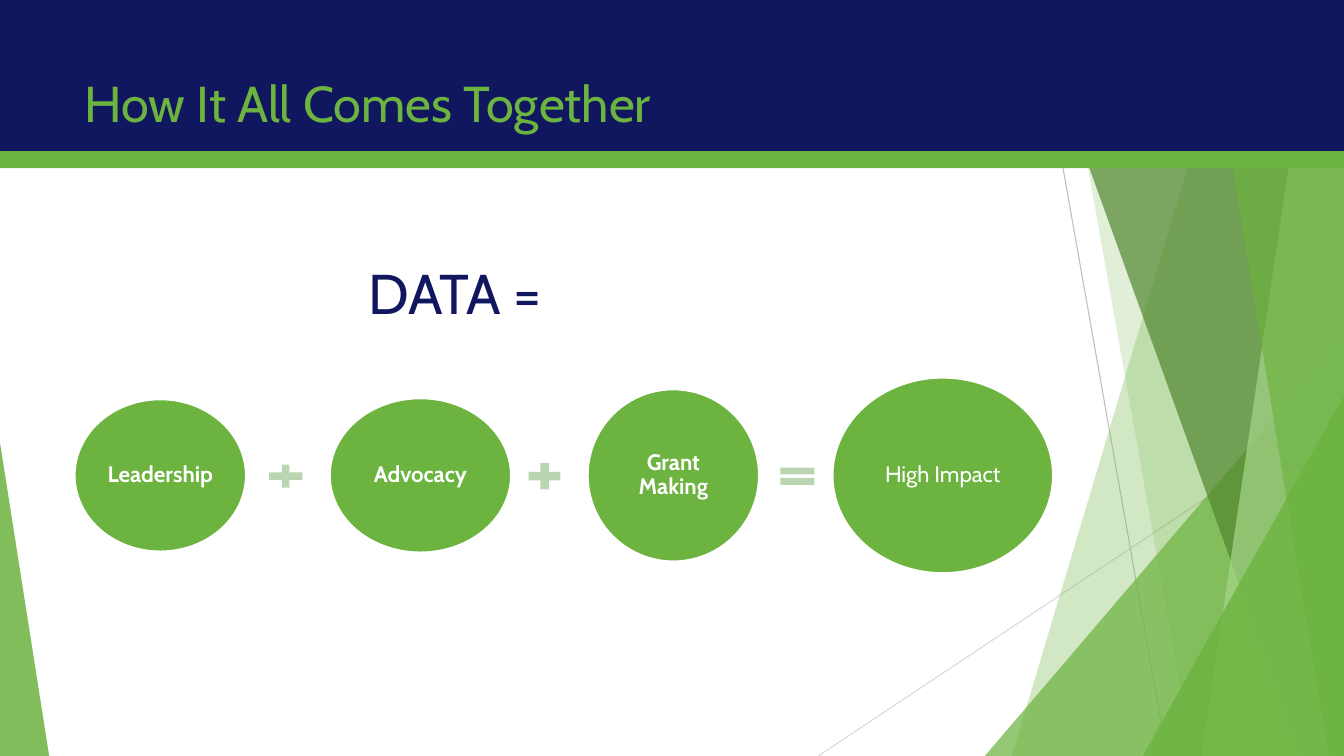
from dataclasses import dataclass
from lxml.etree import SubElement
from pptx import Presentation
from pptx.dml.color import RGBColor as Rgb
from pptx.enum.shapes import MSO_CONNECTOR as Connector, MSO_SHAPE as Preset
from pptx.enum.text import MSO_ANCHOR as Anchor, PP_ALIGN as Align
from pptx.oxml.ns import qn
from pptx.util import Cm, Pt


@dataclass(frozen=True)
class Theme:
    font: str = "Cabin"
    green: str = "6CB33F"
    dark_green: str = "51862F"
    light_green: str = "A6D588"
    pale_green: str = "BAD6B0"
    navy: str = "11175E"
    white: str = "FFFFFF"
    grey: str = "BFBFBF"
    light_grey: str = "D9D9D9"
    title_size: int = 36
    data_size: int = 40
    label_size: int = 16


theme = Theme()
WIDTH, HEIGHT = 33.87, 19.05


def paint(shape, color, opacity=100):
    shape.shadow.inherit = False
    shape.line.fill.background()
    shape.fill.solid()
    shape.fill.fore_color.rgb = Rgb.from_string(color)
    if opacity < 100:
        color_element = shape.fill._xPr.find(qn("a:solidFill"))[0]
        SubElement(color_element, qn("a:alpha"), val=str(opacity * 1000))


def write(shape, text, size, color, bold=False):
    shape.text_frame.word_wrap = True
    paragraph = shape.text_frame.paragraphs[0]
    run = paragraph.add_run()
    run.text = text
    run.font.name = theme.font
    run.font.size = Pt(size)
    run.font.bold = bold
    run.font.color.rgb = Rgb.from_string(color)
    return paragraph


presentation = Presentation()
presentation.slide_width = Cm(WIDTH)
presentation.slide_height = Cm(HEIGHT)
slide = presentation.slides.add_slide(presentation.slide_layouts[6])
shapes = slide.shapes

rays = [
    (26.04, 0, 29.41, HEIGHT, theme.grey),
    (WIDTH, 10.24, 20.62, HEIGHT, theme.light_grey),
]
for start_x, start_y, end_x, end_y, color in rays:
    ray = shapes.add_connector(
        Connector.STRAIGHT, Cm(start_x), Cm(start_y), Cm(end_x), Cm(end_y)
    )
    ray.line.color.rgb = Rgb.from_string(color)
    ray.line.width = Pt(0.75)
    SubElement(ray._element.spPr, qn("a:effectLst"))

facets = [
    ("pane", (31.19, 25.5), theme.green, 30),
    ("pane", (26.67, 30.05), theme.green, 20),
    ("wedge", (24.82, 8.46, WIDTH, 1), theme.green, 72),
    ("pane", (25.93, 32.79), theme.dark_green, 70),
    ("pane", (33.1, 30.28), theme.light_green, 70),
    ("pane", (30.38, 33.48), theme.green, 65),
    ("wedge", (28.8, 9.98, WIDTH, 1), theme.green, 80),
    ("wedge", (0, 11.15, 1.24, 0), theme.green, 85),
]
for kind, geometry, color, opacity in facets:
    if kind == "pane":
        top_x, bottom_x = geometry
        outline = shapes.build_freeform(Cm(top_x), 0)
        corners = [(WIDTH, 0), (WIDTH, HEIGHT), (bottom_x, HEIGHT)]
        outline.add_line_segments([(Cm(x), Cm(y)) for x, y in corners], close=True)
        facet = outline.convert_to_shape()
    else:
        left, top, right, apex = geometry
        facet = shapes.add_shape(
            Preset.ISOSCELES_TRIANGLE,
            Cm(left), Cm(top), Cm(right - left), Cm(HEIGHT - top),
        )
        facet.adjustments[0] = apex
    paint(facet, color, opacity)

bands = [(0, 3.81, theme.navy), (3.81, 0.23, theme.green), (4.01, 0.23, theme.green)]
for top, height, color in bands:
    band = shapes.add_shape(Preset.RECTANGLE, 0, Cm(top), Cm(WIDTH), Cm(height))
    paint(band, color)

title = shapes.add_textbox(Cm(1.88), Cm(1.7), Cm(23.88), Cm(3.66))
write(title, "How It All Comes Together", theme.title_size, theme.green)

row_center = 11.98
circles = [
    ("Leadership", 1.88, 4.32, 3.84, True),
    ("Advocacy", 8.31, 4.57, 3.89, True),
    ("Grant Making", 14.81, 4.32, 4.34, True),
    ("High Impact", 20.98, 5.56, 4.93, False),
]
for label, left, width, height, bold in circles:
    circle = shapes.add_shape(
        Preset.OVAL, Cm(left), Cm(row_center - height / 2), Cm(width), Cm(height)
    )
    paint(circle, theme.green)
    circle.line.color.rgb = Rgb.from_string(theme.white)
    circle.line.width = Pt(1.5)
    frame = circle.text_frame
    frame.margin_left = frame.margin_right = Cm(0.05)
    frame.margin_top = frame.margin_bottom = Cm(0.05)
    frame.vertical_anchor = Anchor.MIDDLE
    paragraph = write(circle, label, theme.label_size, theme.white, bold)
    paragraph.alignment = Align.CENTER
    paragraph.line_spacing = 0.9

operators = [
    (Preset.MATH_PLUS, 6.63, 1.14, 0.79),
    (Preset.MATH_PLUS, 13.18, 1.09, 0.91),
    (Preset.MATH_EQUAL, 19.51, 1.17, 0.74),
]
for preset, left, width, height in operators:
    operator = shapes.add_shape(
        preset, Cm(left), Cm(row_center + 0.02 - height / 2), Cm(width), Cm(height)
    )
    paint(operator, theme.pale_green)

data = shapes.add_textbox(Cm(9.03), Cm(6.4), Cm(10.7), Cm(1.96))
write(data, "DATA =", theme.data_size, theme.navy)

presentation.save("out.pptx")
